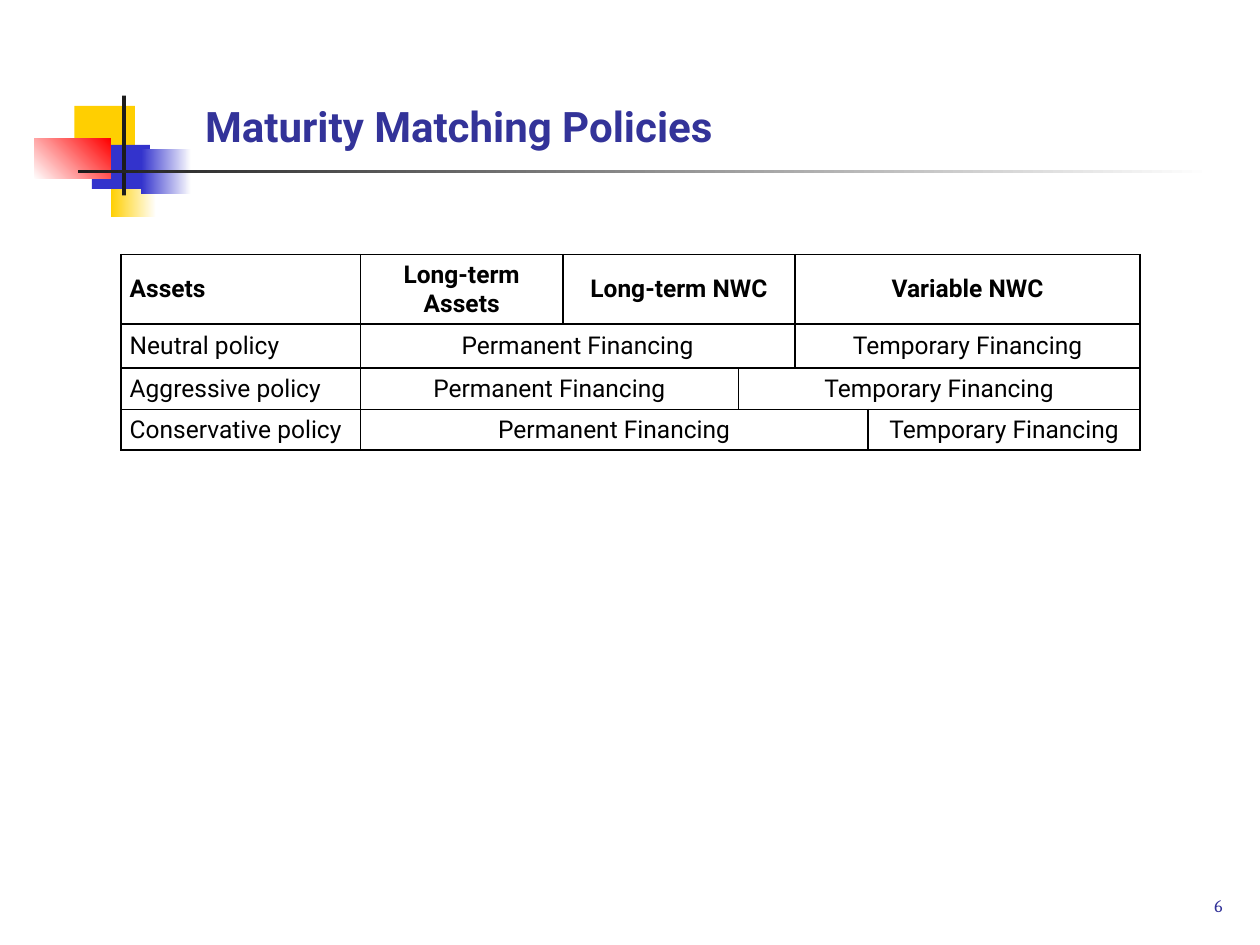
from lxml.etree import SubElement
from pptx import Presentation
from pptx.dml.color import RGBColor
from pptx.enum.shapes import MSO_SHAPE
from pptx.enum.text import MSO_ANCHOR, PP_ALIGN
from pptx.oxml.ns import qn
from pptx.util import Inches, Pt

THEME = {
    "heading_font": "Roboto", "number_font": "Cambria",
    "title_size": 24, "table_size": 14, "number_size": 10,
    "accent": "333399", "ink": "000000", "paper": "FFFFFF", "border_width": 1,
    "yellow": "FFCF01", "blue": "3333CC", "red": "FF0000", "charcoal": "1C1C1C",
}

TITLE = "Maturity Matching Policies"
SLIDE_NUMBER = "6"

# left, top, width, height, colours (two make a gradient), gradient angle
ORNAMENT = [
    (0.88, 1.2, 0.36, 0.52, ("yellow", "paper"), 0),
    (0.59, 0.84, 0.48, 0.35, ("yellow",), 0),
    (0.73, 1.15, 0.46, 0.35, ("blue",), 0),
    (1.12, 1.18, 0.4, 0.36, ("blue", "paper"), 0),
    (0.27, 1.1, 0.61, 0.32, ("paper", "red"), 45),
    (0.97, 0.76, 0.03, 0.79, ("charcoal",), 0),
    (0.62, 1.35, 9, 0.02, ("charcoal", "paper"), 0),
]

TABLE_LEFT, TABLE_TOP = 0.96, 2.02
COLUMN_WIDTHS = [1.9, 1.61, 1.39, 0.45, 0.58, 2.16]
ROW_HEIGHTS = [0.55, 0.35, 0.33, 0.32]
# each cell: text, number of columns it covers
POLICY_ROWS = [
    [("Assets", 1), ("Long-term Assets", 1), ("Long-term NWC", 2), ("Variable NWC", 2)],
    [("Neutral policy", 1), ("Permanent Financing", 3), ("Temporary Financing", 2)],
    [("Aggressive policy", 1), ("Permanent Financing", 2), ("Temporary Financing", 3)],
    [("Conservative policy", 1), ("Permanent Financing", 4), ("Temporary Financing", 1)],
]


def theme_color(name):
    return RGBColor.from_string(THEME[name])


def write_text(text_frame, text, font, size, color, bold=False, align=PP_ALIGN.LEFT):
    paragraph = text_frame.paragraphs[0]
    paragraph.alignment = align
    run = paragraph.add_run()
    run.text = text
    values = {"name": THEME[font], "size": Pt(THEME[size]), "bold": bold}
    for attribute, value in values.items():
        setattr(run.font, attribute, value)
    run.font.color.rgb = theme_color(color)


def add_text(slide, box, *text_format, **options):
    text_frame = slide.shapes.add_textbox(*map(Inches, box)).text_frame
    text_frame.word_wrap = True
    text_frame.vertical_anchor = MSO_ANCHOR.BOTTOM
    write_text(text_frame, *text_format, **options)


def add_ornament(slide):
    for *box, colors, angle in ORNAMENT:
        shape = slide.shapes.add_shape(MSO_SHAPE.RECTANGLE, *map(Inches, box))
        shape.shadow.inherit = False
        shape.line.fill.background()
        if len(colors) == 1:
            shape.fill.solid()
            shape.fill.fore_color.rgb = theme_color(colors[0])
            continue
        shape.fill.gradient()
        shape.fill.gradient_angle = angle
        for stop, position, color in zip(shape.fill.gradient_stops, (0, 1), colors):
            stop.position = position
            stop.color.rgb = theme_color(color)


def set_borders(cell):
    """Draw all four sides; the lines must precede the fill in the cell properties."""
    properties = cell._tc.get_or_add_tcPr()
    for index, side in enumerate(("lnL", "lnR", "lnT", "lnB")):
        line = SubElement(properties, qn(f"a:{side}"), w=str(Pt(THEME["border_width"])))
        fill = SubElement(line, qn("a:solidFill"))
        SubElement(fill, qn("a:srgbClr"), val=THEME["ink"])
        properties.insert(index, line)


def add_policy_table(slide):
    table = slide.shapes.add_table(
        len(ROW_HEIGHTS), len(COLUMN_WIDTHS), Inches(TABLE_LEFT), Inches(TABLE_TOP),
        Inches(sum(COLUMN_WIDTHS)), Inches(sum(ROW_HEIGHTS))).table
    table.first_row = table.horz_banding = False
    for column, width in zip(table.columns, COLUMN_WIDTHS):
        column.width = Inches(width)
    for row, height in zip(table.rows, ROW_HEIGHTS):
        row.height = Inches(height)
    cell_format = {
        "vertical_anchor": MSO_ANCHOR.MIDDLE,
        "margin_left": Inches(0.07), "margin_right": Inches(0.07),
        "margin_top": 0, "margin_bottom": 0,
    }
    for cell in table.iter_cells():
        for attribute, value in cell_format.items():
            setattr(cell, attribute, value)
        cell.fill.background()
        set_borders(cell)
    for row_index, row in enumerate(POLICY_ROWS):
        column_index = 0
        for text, span in row:
            cell = table.cell(row_index, column_index)
            if span > 1:
                cell.merge(table.cell(row_index, column_index + span - 1))
            write_text(cell.text_frame, text, "heading_font", "table_size", "ink",
                       bold=row_index == 0,
                       align=PP_ALIGN.CENTER if column_index else PP_ALIGN.LEFT)
            column_index += span


def main():
    presentation = Presentation()
    presentation.slide_width, presentation.slide_height = Inches(10), Inches(7.5)
    slide = presentation.slides.add_slide(presentation.slide_layouts[6])
    add_ornament(slide)
    add_text(slide, (1.53, 0.41, 8.52, 0.84), TITLE,
             "heading_font", "title_size", "accent", bold=True)
    add_text(slide, (7.52, 6.82, 2.28, 0.5), SLIDE_NUMBER,
             "number_font", "number_size", "accent", align=PP_ALIGN.RIGHT)
    add_policy_table(slide)
    presentation.save("out.pptx")


if __name__ == "__main__":
    main()
